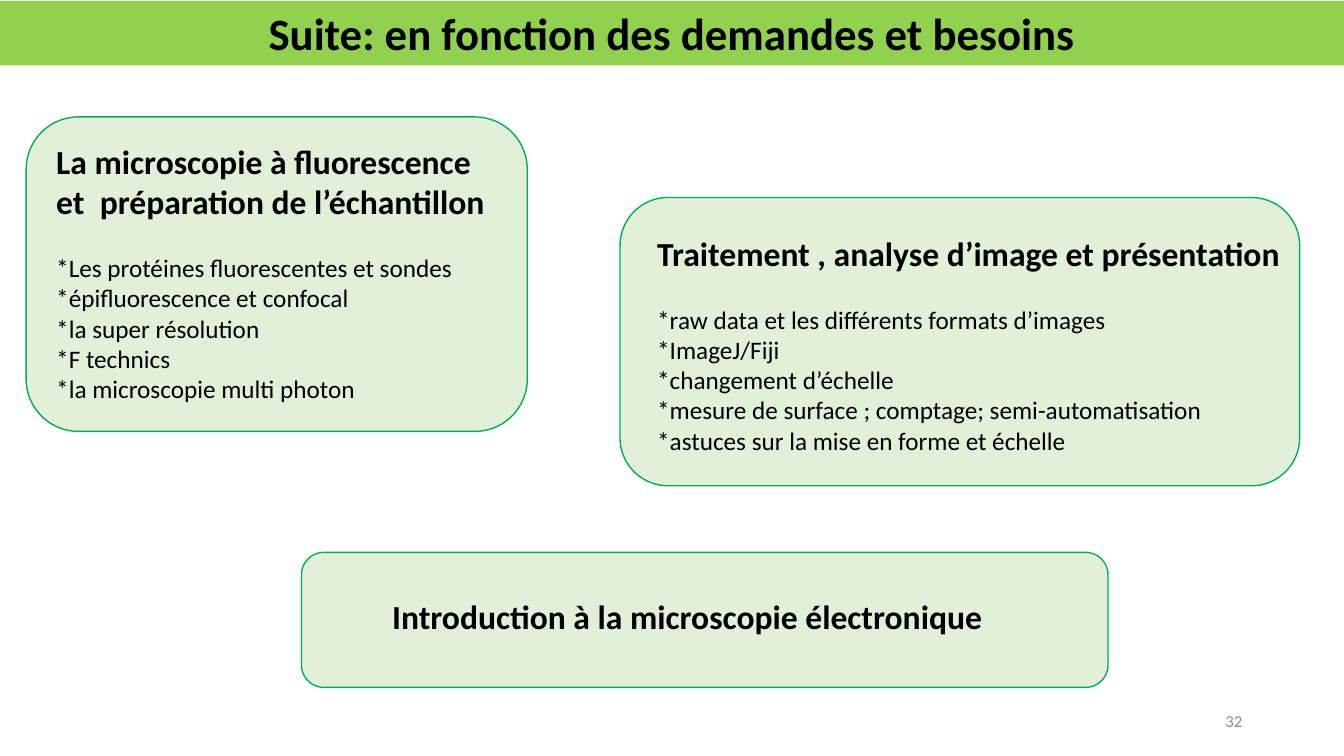
import pptx
import pptx.dml.color
import pptx.enum.shapes
import pptx.enum.text
import pptx.util

Inches = pptx.util.Inches
Pt = pptx.util.Pt
SHAPES = pptx.enum.shapes.MSO_SHAPE
ALIGN = pptx.enum.text.PP_ALIGN
ANCHOR = pptx.enum.text.MSO_ANCHOR

FLUORESCENCE_HEADINGS = [
    "La microscopie à fluorescence",
    "et  préparation de l’échantillon",
]
FLUORESCENCE_TOPICS = [
    "*Les protéines fluorescentes et sondes",
    "*épifluorescence et confocal",
    "*la super résolution",
    "*F technics",
    "*la microscopie multi photon",
]
ANALYSIS_HEADINGS = ["Traitement , analyse d’image et présentation"]
ANALYSIS_TOPICS = [
    "*raw data et les différents formats d’images",
    "*ImageJ/Fiji",
    "*changement d’échelle",
    "*mesure de surface ; comptage; semi-automatisation",
    "*astuces sur la mise en forme et échelle",
]


def color(value):
    return pptx.dml.color.RGBColor.from_string(value)


def add_filled_shape(slide, kind, box, fill, line=None):
    shape = slide.shapes.add_shape(kind, *map(Inches, box))
    shape.shadow.inherit = False
    shape.fill.solid()
    shape.fill.fore_color.rgb = color(fill)
    if line:
        shape.line.color.rgb = color(line)
        shape.line.width = Pt(1)
    else:
        shape.line.fill.background()
    return shape


def write_lines(text_frame, lines, size, bold=False, align=ALIGN.LEFT,
                text_color="000000", space_before=0):
    """Append one paragraph per line; space_before applies to the first."""
    for index, line in enumerate(lines):
        paragraph = text_frame.paragraphs[0]
        if paragraph.runs:
            paragraph = text_frame.add_paragraph()
        paragraph.alignment = align
        if index == 0 and space_before:
            paragraph.space_before = Pt(space_before)
        run = paragraph.add_run()
        run.text = line
        run.font.name = "Calibri"
        run.font.size = Pt(size)
        run.font.bold = bold
        run.font.color.rgb = color(text_color)


def add_title_band(slide, box, title):
    band = add_filled_shape(slide, SHAPES.RECTANGLE, box, "92D050")
    band.text_frame.word_wrap = True
    band.text_frame.vertical_anchor = ANCHOR.TOP
    write_lines(band.text_frame, [title], 32, bold=True, align=ALIGN.CENTER)


def add_topic_card(slide, box, text_box, headings, topics=(), wrap=True):
    """Draw a rounded card; text_box is measured from the card's corner."""
    left, top = box[:2]
    text_left, text_top, text_width, text_height = text_box
    add_filled_shape(slide, SHAPES.ROUNDED_RECTANGLE, box, "E2F0D9", "00B050")
    text = slide.shapes.add_textbox(
        Inches(left + text_left), Inches(top + text_top),
        Inches(text_width), Inches(text_height))
    text.text_frame.word_wrap = wrap
    write_lines(text.text_frame, headings, 24, bold=True)
    write_lines(text.text_frame, topics, 18, space_before=22)


def add_slide_number(slide, box, number):
    text = slide.shapes.add_textbox(*map(Inches, box))
    text.text_frame.word_wrap = True
    text.text_frame.vertical_anchor = ANCHOR.MIDDLE
    write_lines(text.text_frame, [number], 12, align=ALIGN.RIGHT,
                text_color="8C8C8C")


def main():
    presentation = pptx.Presentation()
    presentation.slide_width = Inches(13.33)
    presentation.slide_height = Inches(7.5)
    slide = presentation.slides.add_slide(presentation.slide_layouts[6])

    add_topic_card(slide, (2.99, 5.48, 8, 1.34), (0.8, 0.38, 6.89, 0.5),
                   ["Introduction à la microscopie électronique"])
    add_topic_card(slide, (0.26, 1.16, 4.97, 3.12), (0.2, 0.19, 4.5, 2.73),
                   FLUORESCENCE_HEADINGS, FLUORESCENCE_TOPICS, wrap=False)
    add_topic_card(slide, (6.15, 1.96, 6.74, 2.86), (0.27, 0.3, 6.67, 2.32),
                   ANALYSIS_HEADINGS, ANALYSIS_TOPICS)
    add_title_band(slide, (0, 0.01, 13.33, 0.64),
                   "Suite: en fonction des demandes et besoins")
    add_slide_number(slide, (9.42, 6.95, 3, 0.4), "32")
    presentation.save("out.pptx")


if __name__ == "__main__":
    main()
